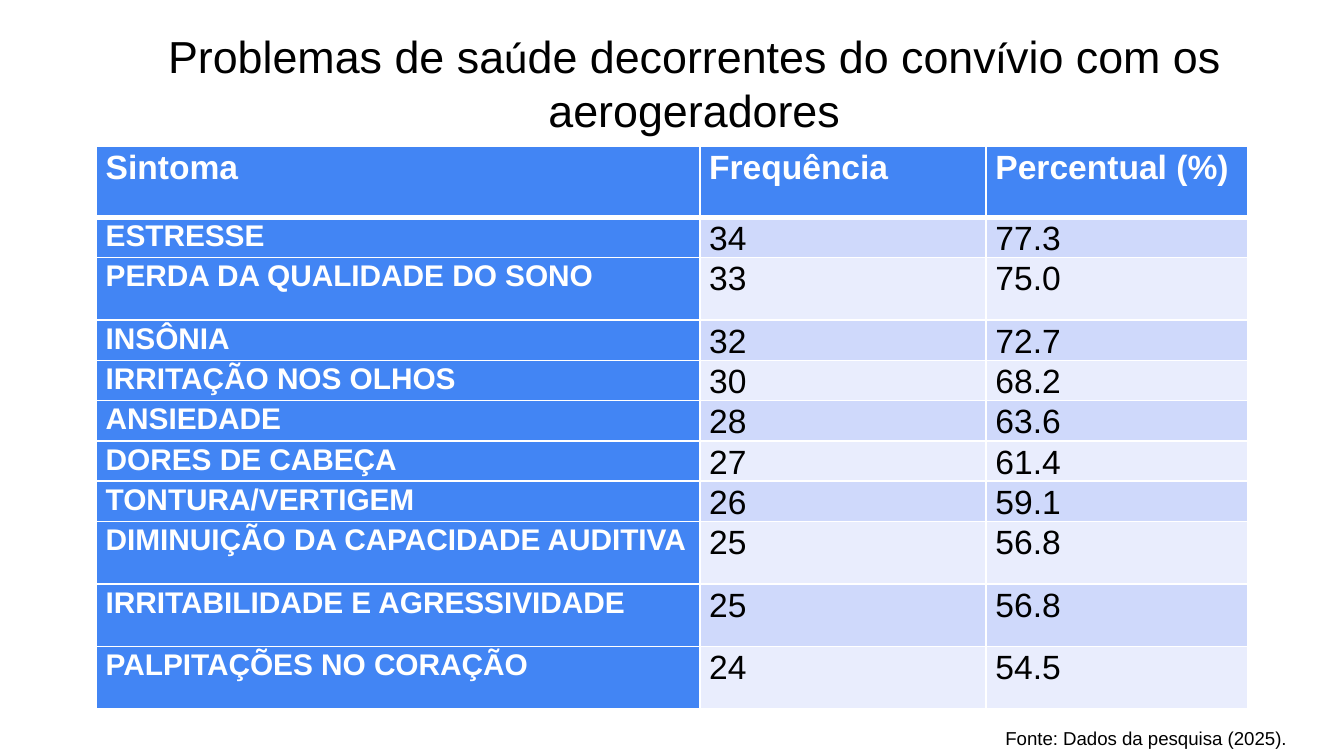
"""Slide with a table of the health problems reported near wind turbines."""
import pptx
import pptx.dml.color
import pptx.enum.text
import pptx.oxml
import pptx.oxml.ns
import pptx.util

COLOURS = {"header": "4285F4", "band": "CFD9FB", "pale": "E9EDFD", "white": "FFFFFF", "black": "000000"}
TITLE = [("Problemas de sa", "Arial"), ("ú", "Calibri"), ("de decorrentes do conv", "Arial"),
         ("í", "Calibri"), ("vio com os aerogeradores", "Arial")]
HEADERS = ("Sintoma", "Frequência", "Percentual (%)")
SHORT, TALL = 4.62, 8.28
SYMPTOMS = [
    ("ESTRESSE", "34", "77.3", SHORT),
    ("PERDA DA QUALIDADE DO SONO", "33", "75.0", TALL),
    ("INSÔNIA", "32", "72.7", SHORT),
    ("IRRITAÇÃO NOS OLHOS", "30", "68.2", SHORT),
    ("ANSIEDADE", "28", "63.6", SHORT),
    ("DORES DE CABEÇA", "27", "61.4", SHORT),
    ("TONTURA/VERTIGEM", "26", "59.1", SHORT),
    ("DIMINUIÇÃO DA CAPACIDADE AUDITIVA", "25", "56.8", TALL),
    ("IRRITABILIDADE E AGRESSIVIDADE", "25", "56.8", TALL),
    ("PALPITAÇÕES NO CORAÇÃO", "24", "54.5", TALL),
]


class SlideBuilder:
    """Holds the style and the current slide; lengths are percentages of the slide's size."""

    def __init__(self, presentation):
        self.presentation = presentation
        self.slide = presentation.slides.add_slide(presentation.slide_layouts[5])

    def across(self, share):
        return round(self.presentation.slide_width * share / 100)

    def down(self, share):
        return round(self.presentation.slide_height * share / 100)

    def box(self, left, top, width, height):
        return self.across(left), self.down(top), self.across(width), self.down(height)

    def run(self, paragraph, text, size, colour="black", bold=False, font="Arial"):
        run = paragraph.add_run()
        run.text = text
        run.font.name = font
        run.font.size = pptx.util.Pt(size)
        run.font.bold = bold
        run.font.color.rgb = pptx.dml.color.RGBColor.from_string(COLOURS[colour])

    def title(self, pieces, *place):
        shape = self.slide.shapes.title
        shape.left, shape.top, shape.width, shape.height = self.box(*place)
        frame = shape.text_frame
        frame.word_wrap = True
        frame.auto_size = pptx.enum.text.MSO_AUTO_SIZE.NONE
        frame.vertical_anchor = pptx.enum.text.MSO_ANCHOR.MIDDLE
        frame.margin_left = frame.margin_right = pptx.util.Inches(0.1)
        frame.margin_top = frame.margin_bottom = pptx.util.Inches(0.1)
        paragraph = frame.paragraphs[0]
        paragraph.alignment = pptx.enum.text.PP_ALIGN.CENTER
        for text, font in pieces:
            self.run(paragraph, text, 24, font=font)

    def note(self, text, *place):
        frame = self.slide.shapes.add_textbox(*self.box(*place)).text_frame
        frame.word_wrap = True
        frame.auto_size = pptx.enum.text.MSO_AUTO_SIZE.SHAPE_TO_FIT_TEXT
        paragraph = frame.paragraphs[0]
        paragraph.alignment = pptx.enum.text.PP_ALIGN.RIGHT
        paragraph.line_spacing = 1.07
        paragraph.space_after = pptx.util.Pt(6)
        self.run(paragraph, text, 10)

    def borders(self, cell, bottom, top):
        properties = cell._tc.get_or_add_tcPr()
        for side, points in (("L", 1), ("R", 1), ("T", top), ("B", bottom)):
            properties.append(pptx.oxml.parse_xml(
                f'<a:ln{side} {pptx.oxml.ns.nsdecls("a")} w="{pptx.util.Pt(points)}"><a:solidFill>'
                f'<a:srgbClr val="{COLOURS["white"]}"/></a:solidFill></a:ln{side}>'))

    def cell(self, cell, text, size, fill, colour, bold, bottom=1, top=1):
        self.borders(cell, bottom, top)
        cell.fill.solid()
        cell.fill.fore_color.rgb = pptx.dml.color.RGBColor.from_string(COLOURS[fill])
        cell.margin_left = cell.margin_right = pptx.util.Inches(0.07)
        cell.margin_top = cell.margin_bottom = 0
        paragraph = cell.text_frame.paragraphs[0]
        paragraph.line_spacing = 1.07
        paragraph.space_after = pptx.util.Pt(8)
        self.run(paragraph, text, size, colour, bold)

    def table(self, headers, records, left, top, widths, header_height):
        heights = [header_height] + [record[-1] for record in records]
        place = self.box(left, top, sum(widths), sum(heights))
        table = self.slide.shapes.add_table(len(heights), len(widths), *place).table
        for column, width in zip(table.columns, widths):
            column.width = self.across(width)
        for row, height in zip(table.rows, heights):
            row.height = self.down(height)
        for column, text in enumerate(headers):
            self.cell(table.cell(0, column), text, 18, "header", "white", True, bottom=3)
        for row, (symptom, *values, _) in enumerate(records, 1):
            top_line = 3 if row == 1 else 1
            band = "band" if row % 2 else "pale"
            self.cell(table.cell(row, 0), symptom, 16, "header", "white", True, top=top_line)
            for column, value in enumerate(values, 1):
                self.cell(table.cell(row, column), value, 18, band, "black", False, top=top_line)


def main():
    presentation = pptx.Presentation()
    presentation.slide_width = pptx.util.Inches(10)
    presentation.slide_height = presentation.slide_width * 9 // 16
    builder = SlideBuilder(presentation)
    builder.title(TITLE, 8.3, 5.7, 86.7, 10.5)
    builder.table(HEADERS, SYMPTOMS, 7.17, 19.4, (44.9, 21.3, 19.45), 9.35)
    builder.note("Fonte: Dados da pesquisa (2025).", 70, 95.1, 26.7, 4.8)
    presentation.save("out.pptx")


if __name__ == "__main__":
    main()
